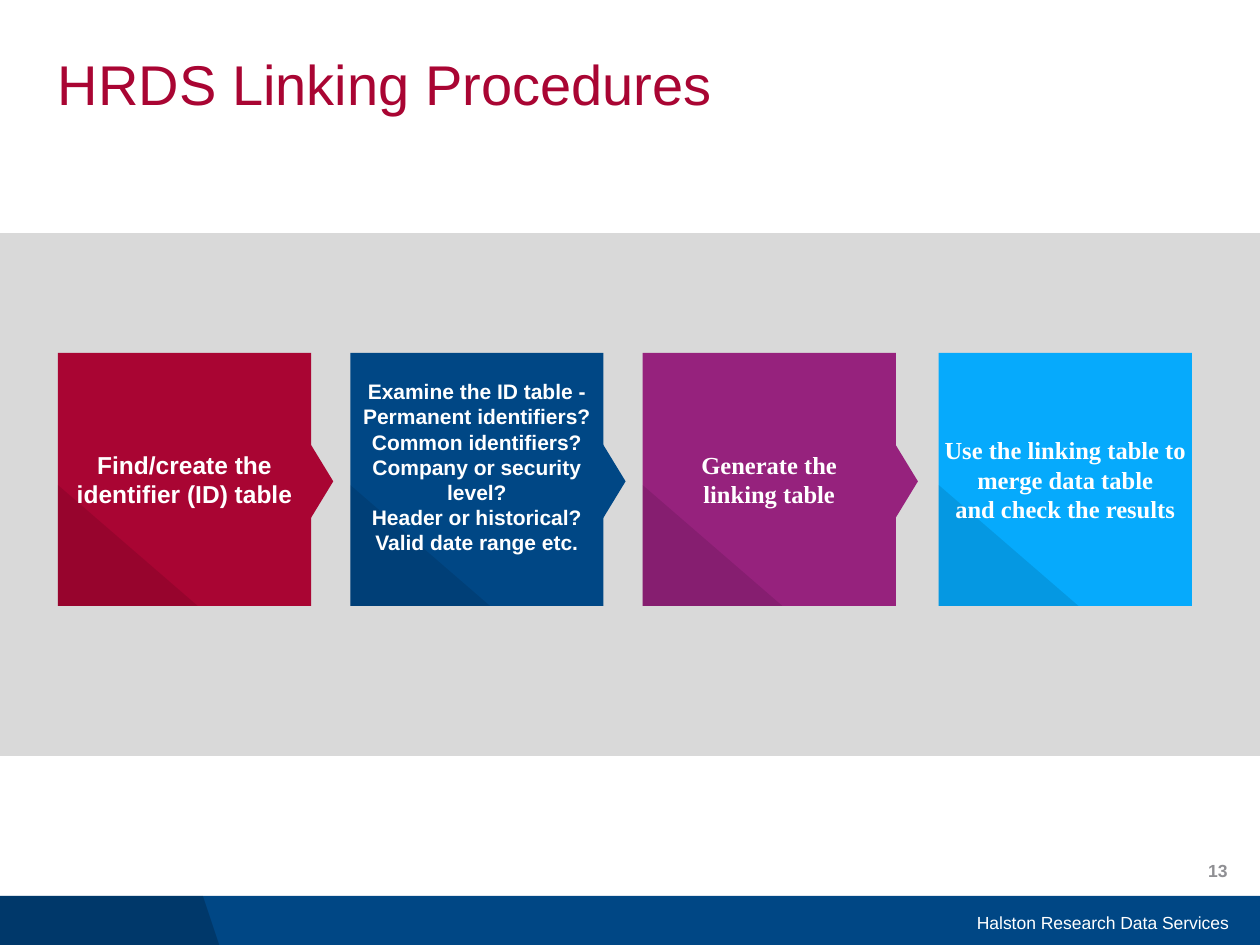
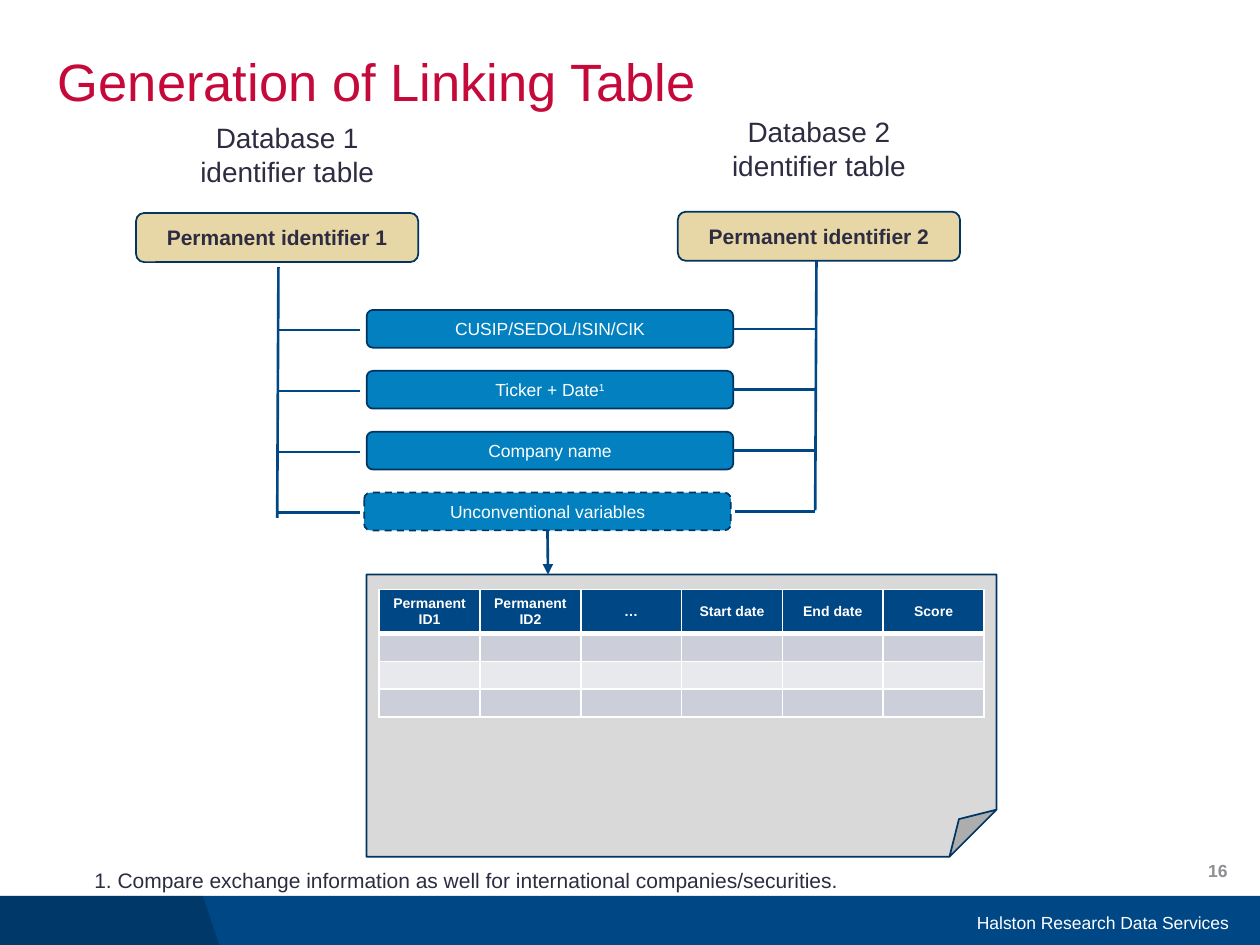
from lxml import etree
from pptx import Presentation
from pptx.dml.color import RGBColor
from pptx.enum.dml import MSO_LINE
from pptx.enum.shapes import MSO_CONNECTOR, MSO_SHAPE
from pptx.enum.text import MSO_ANCHOR, PP_ALIGN
from pptx.oxml.ns import qn
from pptx.util import Inches, Pt

RECT, ROUNDED = MSO_SHAPE.RECTANGLE, MSO_SHAPE.ROUNDED_RECTANGLE
TRIANGLE, FOLDED = MSO_SHAPE.ISOSCELES_TRIANGLE, MSO_SHAPE.FOLDED_CORNER
STRAIGHT, DASH = MSO_CONNECTOR.STRAIGHT, MSO_LINE.DASH
LEFT, CENTER, RIGHT = PP_ALIGN.LEFT, PP_ALIGN.CENTER, PP_ALIGN.RIGHT
TOP, MIDDLE = MSO_ANCHOR.TOP, MSO_ANCHOR.MIDDLE

NAVY = RGBColor(0x00, 0x47, 0x85)
OUTLINE = RGBColor(0x00, 0x35, 0x62)
CRIMSON = RGBColor(0xA9, 0x05, 0x33)
RED = RGBColor(0xC5, 0x09, 0x3B)
PURPLE = RGBColor(0x96, 0x22, 0x7D)
SKY = RGBColor(0x06, 0xAA, 0xFC)
BLUE = RGBColor(0x02, 0x80, 0xBF)
SAND = RGBColor(0xE7, 0xD7, 0xA6)
INK = RGBColor(0x2D, 0x2C, 0x41)
GRAY = RGBColor(0xD9, 0xD9, 0xD9)
NUMBER_GRAY = RGBColor(0x8F, 0x8F, 0x93)
ROW_DARK = RGBColor(0xCC, 0xCF, 0xD9)
ROW_LIGHT = RGBColor(0xE7, 0xE9, 0xED)
WHITE = RGBColor(0xFF, 0xFF, 0xFF)
BLACK = RGBColor(0x00, 0x00, 0x00)


def paint(shape, fill, outline=None, opacity=None):
    shape.shadow.inherit = False
    shape.fill.solid()
    shape.fill.fore_color.rgb = fill
    if opacity:
        color = shape._element.spPr.find(qn("a:solidFill"))[0]
        etree.SubElement(color, qn("a:alpha"), val=str(opacity * 1000))
    if outline:
        shape.line.color.rgb = outline
        shape.line.width = Pt(1)
    else:
        shape.line.fill.background()
    return shape


def write(box, lines, size, color, bold=False, align=CENTER, anchor=MIDDLE, font="Arial"):
    frame = box.text_frame
    frame.word_wrap = True
    frame.vertical_anchor = anchor
    frame.text = "\n".join(lines)
    for para in frame.paragraphs:
        para.alignment = align
        para.font.name = font
        para.font.size = Pt(size)
        para.font.bold = bold
        para.font.color.rgb = color
    return frame


deck = Presentation()
deck.slide_width, deck.slide_height = Inches(10), Inches(7.5)

# Shared title, footer band and page number
pages = []
for title, title_size, title_color, number in [
    ("HRDS Linking Procedures", 32, CRIMSON, "13"),
    ("Generation of Linking Table", 30, RED, "16"),
]:
    page = deck.slides.add_slide(deck.slide_layouts[6])
    pages.append(page)
    paint(page.shapes.add_shape(RECT, 0, Inches(7.11), Inches(10), Inches(0.39)), NAVY)
    outline = page.shapes.build_freeform(0, Inches(7.11))
    outline.add_line_segments(
        [(Inches(x), Inches(y)) for x, y in [(1.61, 7.11), (1.74, 7.5), (0, 7.5)]])
    paint(outline.convert_to_shape(), BLACK, opacity=20)

    box = page.shapes.add_textbox(Inches(0.46), Inches(0.4), Inches(8.62), Inches(0.59))
    frame = write(box, [title], title_size, title_color, align=LEFT, anchor=TOP)
    frame.margin_left = frame.margin_right = 0
    frame.paragraphs[0].line_spacing = 0.9

    box = page.shapes.add_textbox(Inches(6.47), Inches(7.12), Inches(3.38), Inches(0.4))
    write(box, ["Halston Research Data Services"], 10, WHITE, align=RIGHT)
    box = page.shapes.add_textbox(Inches(7.59), Inches(6.71), Inches(2.25), Inches(0.4))
    write(box, [number], 10, NUMBER_GRAY, bold=True, align=RIGHT)

steps_page, table_page = pages

# Procedure steps on a gray band
paint(steps_page.shapes.add_shape(RECT, 0, Inches(1.85), Inches(10), Inches(4.15)), GRAY)
step_top, step_side = Inches(2.8), Inches(2.01)
steps = [
    (0.46, CRIMSON, 14, "Arial", ["Find/create the", "identifier (ID) table"]),
    (2.78, NAVY, 12, "Arial", [
        "Examine the ID table -", "Permanent identifiers?", "Common identifiers?",
        "Company or security", "level?", "Header or historical?", "Valid date range etc."]),
    (5.1, PURPLE, 14, "Times New Roman", ["Generate the", "linking table"]),
    (7.45, SKY, 14, "Times New Roman", [
        "Use the linking table to merge data table", "and check the results"]),
]
for left, color, size, font, lines in steps:
    x = Inches(left)
    paint(steps_page.shapes.add_shape(RECT, x, step_top, step_side, step_side), color)
    corner = steps_page.shapes.add_shape(TRIANGLE, x, Inches(3.85), Inches(1.11), Inches(0.96))
    corner.adjustments[0] = 0
    paint(corner, BLACK, opacity=10)
    box = steps_page.shapes.add_textbox(x, step_top, step_side, step_side)
    frame = write(box, lines, size, WHITE, bold=True, font=font)
    frame.margin_left = frame.margin_right = frame.margin_top = frame.margin_bottom = 0
    if len(lines) > 2:
        frame.margin_bottom = Inches(0.2)
    if color != SKY:
        pointer = steps_page.shapes.add_shape(
            TRIANGLE, x + Inches(1.8), Inches(3.73), Inches(0.59), Inches(0.18))
        pointer.rotation = 90
        paint(pointer, color)

# Two databases and their permanent identifiers
shapes = table_page.shapes
for number, heading_left, heading_top, left, top in [
    (1, 0.91, 0.91, 1.08, 1.69), (2, 5.13, 0.86, 5.38, 1.68),
]:
    box = shapes.add_textbox(Inches(heading_left), Inches(heading_top), Inches(2.74), Inches(0.64))
    write(box, [f"Database {number}", "identifier table"], 16, INK, anchor=TOP)
    box = shapes.add_shape(ROUNDED, Inches(left), Inches(top), Inches(2.24), Inches(0.39))
    paint(box, SAND, OUTLINE)
    write(box, [f"Permanent identifier {number}"], 12, INK, bold=True)

# Matching variables with a branch on each side
lines = [
    shapes.add_connector(STRAIGHT, Inches(x1), Inches(y1), Inches(x2), Inches(y2))
    for x1, y1, x2, y2 in [(2.21, 2.12, 2.2, 4.11), (6.48, 2.07, 6.47, 4.05)]
]
variables = ["CUSIP/SEDOL/ISIN/CIK", "Ticker + Date", "Company name", "Unconventional variables"]
for index, variable in enumerate(variables):
    is_last = index == len(variables) - 1
    top = 2.46 + 1.45 * index / 3
    left = 2.89 if is_last else 2.91
    box = shapes.add_shape(ROUNDED, Inches(left), Inches(top), Inches(2.91), Inches(0.3))
    paint(box, BLUE, OUTLINE)
    frame = write(box, [variable], 10, WHITE)
    if variable == "Ticker + Date":
        span = frame.paragraphs[0].add_run()
        span.text = "1"
        span.font._element.set("baseline", "30000")
    y = Inches(top + 0.16)
    lines.append(shapes.add_connector(STRAIGHT, Inches(2.21), y, Inches(2.86), y))
    y = Inches(top + 0.15)
    branch = shapes.add_connector(STRAIGHT, Inches(5.83), y, Inches(6.47), y)
    lines.append(branch)
    if is_last:
        box.line.dash_style = DASH
    else:
        branch.begin_connect(box, 3)

# Arrow from the last variable down to the linking table
arrow = shapes.add_connector(STRAIGHT, Inches(4.35), Inches(4.21), Inches(4.35), Inches(4.56))
arrow.begin_connect(box, 2)
lines.append(arrow)
for line in lines:
    line.line.color.rgb = NAVY
    line.line.width = Pt(1.5)
    etree.SubElement(line._element.spPr, qn("a:effectLst"))
etree.SubElement(arrow.line._get_or_add_ln(), qn("a:tailEnd"), type="triangle")

# Linking table on a folded sheet
sheet = shapes.add_shape(FOLDED, Inches(2.91), Inches(4.56), Inches(5), Inches(2.24))
paint(sheet, GRAY, OUTLINE)
headers = ["Permanent ID1", "Permanent ID2", "…", "Start date", "End date", "Score"]
row_fills = [NAVY, ROW_DARK, ROW_LIGHT, ROW_DARK]
table = shapes.add_table(
    len(row_fills), len(headers), Inches(3.01), Inches(4.68), Inches(4.8), Inches(1.01)).table
for column in table.columns:
    column.width = Inches(0.8)
for row_index, fill in enumerate(row_fills):
    is_header = row_index == 0
    table.rows[row_index].height = Inches(0.35 if is_header else 0.22)
    for column_index, header in enumerate(headers):
        cell = table.cell(row_index, column_index)
        cell.margin_top = cell.margin_bottom = Inches(0.03)
        cell.vertical_anchor = MIDDLE
        properties = cell._tc.get_or_add_tcPr()
        for side in ("L", "R", "T", "B"):
            thick = (is_header and side == "B") or (row_index == 1 and side == "T")
            border = etree.SubElement(properties, qn(f"a:ln{side}"), w=str(Pt(3 if thick else 1)))
            border_fill = etree.SubElement(border, qn("a:solidFill"))
            etree.SubElement(border_fill, qn("a:srgbClr"), val=str(WHITE))
        cell.fill.solid()
        cell.fill.fore_color.rgb = fill
        para = cell.text_frame.paragraphs[0]
        if is_header:
            para.text = header
            para.alignment = CENTER
            para.font.name = "Arial"
            para.font.size = Pt(8)
            para.font.bold = True
            para.font.color.rgb = WHITE
        else:
            etree.SubElement(para._p, qn("a:endParaRPr"), sz="800")

# Footnote
box = shapes.add_textbox(Inches(0.65), Inches(6.84), Inches(6.3), Inches(0.3))
write(box, ["1. Compare exchange information as well for international companies/securities."],
      12, INK, align=LEFT, anchor=TOP)

deck.save("out.pptx")
